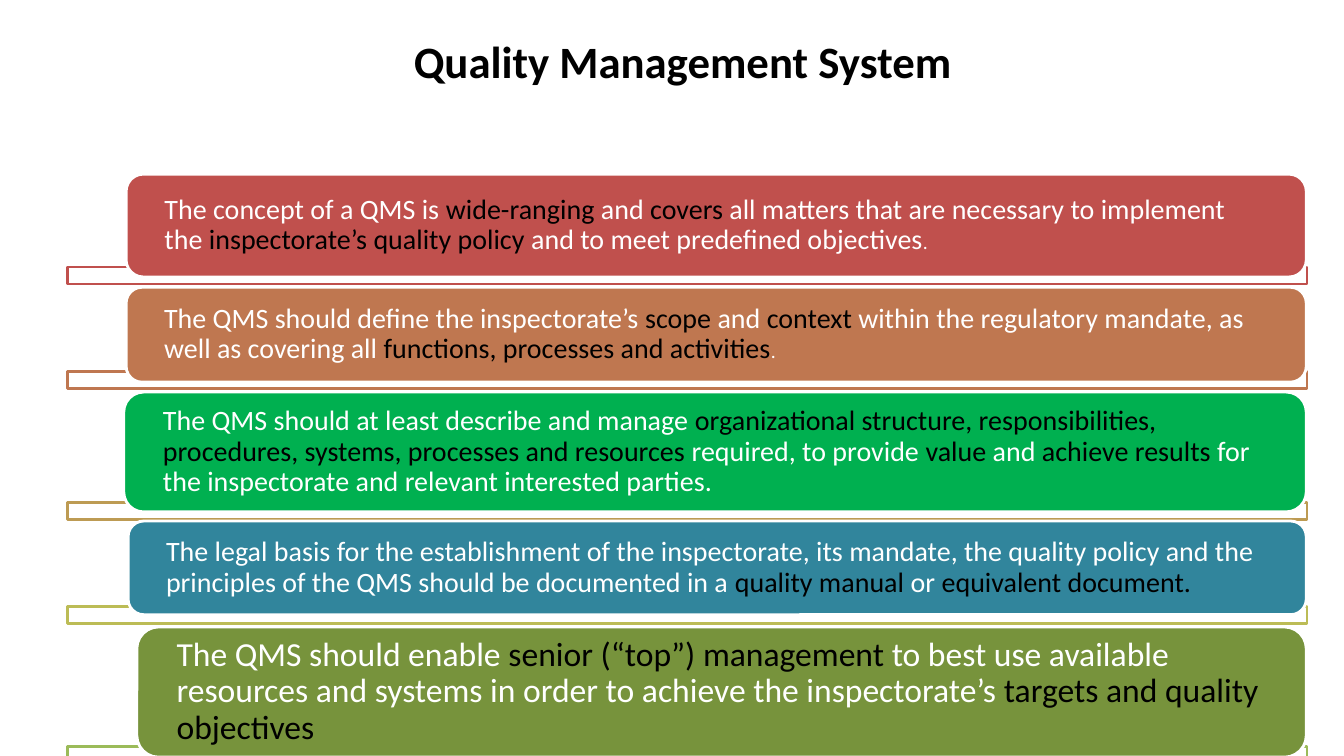
from dataclasses import dataclass

import pptx
import pptx.dml.color
import pptx.enum.shapes
import pptx.enum.text
import pptx.oxml
import pptx.oxml.ns
import pptx.util

Cm = pptx.util.Cm
Pt = pptx.util.Pt
KIND = pptx.enum.shapes.MSO_SHAPE
ALIGN = pptx.enum.text.PP_ALIGN
MIDDLE = pptx.enum.text.MSO_ANCHOR.MIDDLE


@dataclass(frozen=True)
class Theme:
    font: str = "Calibri"
    dark: str = "000000"
    light: str = "FFFFFF"
    title: int = 32
    body: int = 20
    large: int = 24
    small: int = 14
    line: int = 2


@dataclass(frozen=True)
class Point:
    left: float
    top: float
    height: float
    fill: str
    bar: float
    edge: str
    words: tuple[str, ...]
    size: int
    stop: bool = False


THEME = Theme()
RIGHT = 32.92
POINTS = [
    Point(3.18, 4.39, 2.59, "C0504D", 6.73, "C0504D", (
        "The concept of a QMS is ", "wide-ranging ", "and ", "covers",
        " all matters that are necessary to implement the ",
        "inspectorate’s quality policy ",
        "and to meet predefined objectives"), THEME.body, True),
    Point(3.18, 7.24, 2.39, "BF7750", 9.37, "BF7750", (
        "The QMS should define the inspectorate’s ", "scope", " and ", "context",
        " within the regulatory mandate, as well as covering all ",
        "functions, processes and activities"), THEME.body, True),
    Point(3.12, 9.88, 3.02, "00B050", 12.67, "BD9B53", (
        "The QMS should at least describe and manage ",
        "organizational structure, responsibilities, procedures, systems, "
        "processes and resources",
        " required, to provide ", "value ", "and ", "achieve results ",
        "for the inspectorate and relevant interested parties."), THEME.body),
    Point(3.23, 13.13, 2.36, "31859C", 15.29, "BCBC56", (
        "The legal basis for the establishment of the inspectorate, its mandate, "
        "the quality policy and the principles of the QMS should be documented in a ",
        "quality manual ", "or ", "equivalent document."), THEME.body),
    Point(3.45, 15.8, 3.28, "77933C", 18.82, "9BBB59", (
        "The QMS should enable ", "senior (“top”) management ",
        "to best use available resources and systems in order to achieve "
        "the inspectorate’s ",
        "targets and quality objectives"), THEME.large),
]


def rgb(code: str) -> pptx.dml.color.RGBColor:
    return pptx.dml.color.RGBColor.from_string(code)


def style(run, size: int, color: str, bold: bool = False) -> None:
    run.font.name = THEME.font
    run.font.size = Pt(size)
    run.font.bold = bold
    run.font.color.rgb = rgb(color)


def add_box(slide, kind, left: float, top: float, width: float, height: float,
            fill: str, edge: str):
    box = slide.shapes.add_shape(kind, Cm(left), Cm(top), Cm(width), Cm(height))
    box.shadow.inherit = False
    box.fill.solid()
    box.fill.fore_color.rgb = rgb(fill)
    box.line.color.rgb = rgb(edge)
    box.line.width = Pt(THEME.line)
    return box


def add_bar(slide, point: Point) -> None:
    bar = add_box(slide, KIND.RECTANGLE, 1.7, point.bar, 31.24, 0.43,
                  THEME.light, point.edge)
    color = bar.element.spPr.find(".//" + pptx.oxml.ns.qn("a:srgbClr"))
    color.append(pptx.oxml.parse_xml(
        f'<a:alpha {pptx.oxml.ns.nsdecls("a")} val="90000"/>'))


def add_point(slide, point: Point) -> None:
    add_bar(slide, point)
    box = add_box(slide, KIND.ROUNDED_RECTANGLE, point.left, point.top,
                  RIGHT - point.left, point.height, point.fill, THEME.light)
    frame = box.text_frame
    frame.word_wrap = True
    frame.vertical_anchor = MIDDLE
    frame.margin_left = frame.margin_right = Cm(0.84)
    frame.margin_top = frame.margin_bottom = 0
    para = frame.paragraphs[0]
    para.alignment = ALIGN.LEFT
    para.line_spacing = 0.9
    for index, text in enumerate(point.words):
        run = para.add_run()
        run.text = text
        style(run, point.size, THEME.dark if index % 2 else THEME.light)
    if point.stop:
        run = para.add_run()
        run.text = "."
        style(run, THEME.small, THEME.light)


def add_title(slide, text: str) -> None:
    box = slide.shapes.add_textbox(Cm(1.97), Cm(0.53), Cm(30.48), Cm(2.01))
    frame = box.text_frame
    frame.word_wrap = True
    frame.vertical_anchor = MIDDLE
    frame.text = text
    para = frame.paragraphs[0]
    para.alignment = ALIGN.CENTER
    style(para.runs[0], THEME.title, THEME.dark, True)


def main() -> None:
    deck = pptx.Presentation()
    deck.slide_width = Cm(33.87)
    deck.slide_height = Cm(19.05)
    slide = deck.slides.add_slide(deck.slide_layouts[6])
    add_title(slide, "Quality Management System")
    for point in POINTS:
        add_point(slide, point)
    deck.save("out.pptx")


if __name__ == "__main__":
    main()
